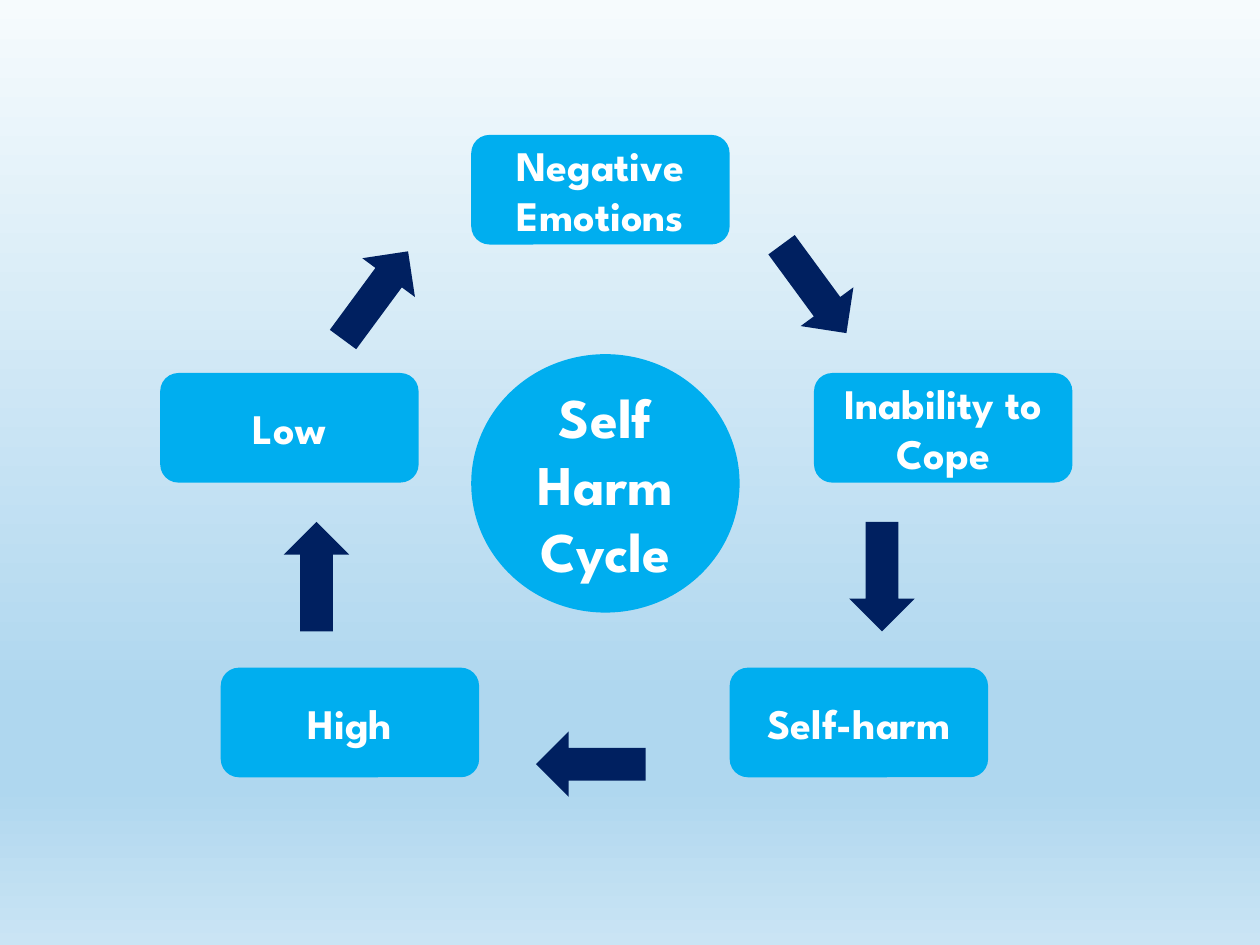
from lxml.etree import SubElement
from pptx import Presentation
from pptx.dml.color import RGBColor as RGB
from pptx.enum.shapes import MSO_SHAPE as Kind
from pptx.enum.text import MSO_ANCHOR as Anchor, PP_ALIGN as Align
from pptx.oxml.ns import qn
from pptx.util import Cm, Pt

FONT = "League Spartan"
HUES = {"sky": "00AEEF", "navy": "002060", "white": "FFFFFF"}
FADE = [(0, "F6FBFD"), (74, "AFD7EF"), (83, "AFD7EF"), (100, "CAE4F4")]

CARD = (5.21, 2.21)
ARROW = (1.32, 2.21)
HUB = (5.41, 5.21)

# Offsets in cm from the top left of the cycle
STEPS = [
    ("Negative Emotions", 6.27, 0),
    ("Inability to Cope", 13.18, 4.8),
    ("Self-harm", 11.48, 10.74),
    ("High", 1.22, 10.74),
    ("Low", 0, 4.8),
]
TURNS = [
    (12.52, 2, 323.7),
    (13.89, 7.8, 0),
    (8.02, 11.58, 90),
    (2.49, 7.8, 180),
    (3.68, 2.13, 216.4),
]


def paint(slide):
    """Fill the background with a downward gradient of several stops."""
    fill = slide.background.fill
    fill.gradient()
    fill.gradient_angle = 270
    stops = next(slide.element.iter(qn("a:gsLst")))
    for stop in list(stops):
        stops.remove(stop)
    for pos, hue in FADE:
        stop = SubElement(stops, qn("a:gs"), pos=str(pos * 1000))
        SubElement(stop, qn("a:srgbClr"), val=hue)


def add_shape(slide, kind, left, top, size, hue):
    shape = slide.shapes.add_shape(
        kind, Cm(left), Cm(top), Cm(size[0]), Cm(size[1]))
    shape.shadow.inherit = False
    shape.fill.solid()
    shape.fill.fore_color.rgb = RGB.from_string(HUES[hue])
    shape.line.fill.background()
    return shape


def write(shape, text, size):
    frame = shape.text_frame
    frame.word_wrap = True
    frame.vertical_anchor = Anchor.MIDDLE
    para = frame.paragraphs[0]
    para.text = text
    para.alignment = Align.CENTER
    font = para.font
    font.name, font.size, font.bold = FONT, Pt(size), True
    font.color.rgb = RGB.from_string(HUES["white"])


def add_cycle(slide, left, top):
    for text, x, y in STEPS:
        card = add_shape(slide, Kind.ROUNDED_RECTANGLE,
                         left + x, top + y, CARD, "sky")
        write(card, text, 24)
    hub = add_shape(slide, Kind.OVAL, left + 6.27, top + 4.42, HUB, "sky")
    write(hub, "Self Harm Cycle", 32)
    for x, y, angle in TURNS:
        arrow = add_shape(slide, Kind.DOWN_ARROW,
                          left + x, top + y, ARROW, "navy")
        arrow.rotation = angle


def main():
    deck = Presentation()
    deck.slide_width, deck.slide_height = Cm(25.4), Cm(19.05)
    slide = deck.slides.add_slide(deck.slide_layouts[6])
    paint(slide)
    add_cycle(slide, 3.23, 2.72)
    deck.save("out.pptx")


if __name__ == "__main__":
    main()
